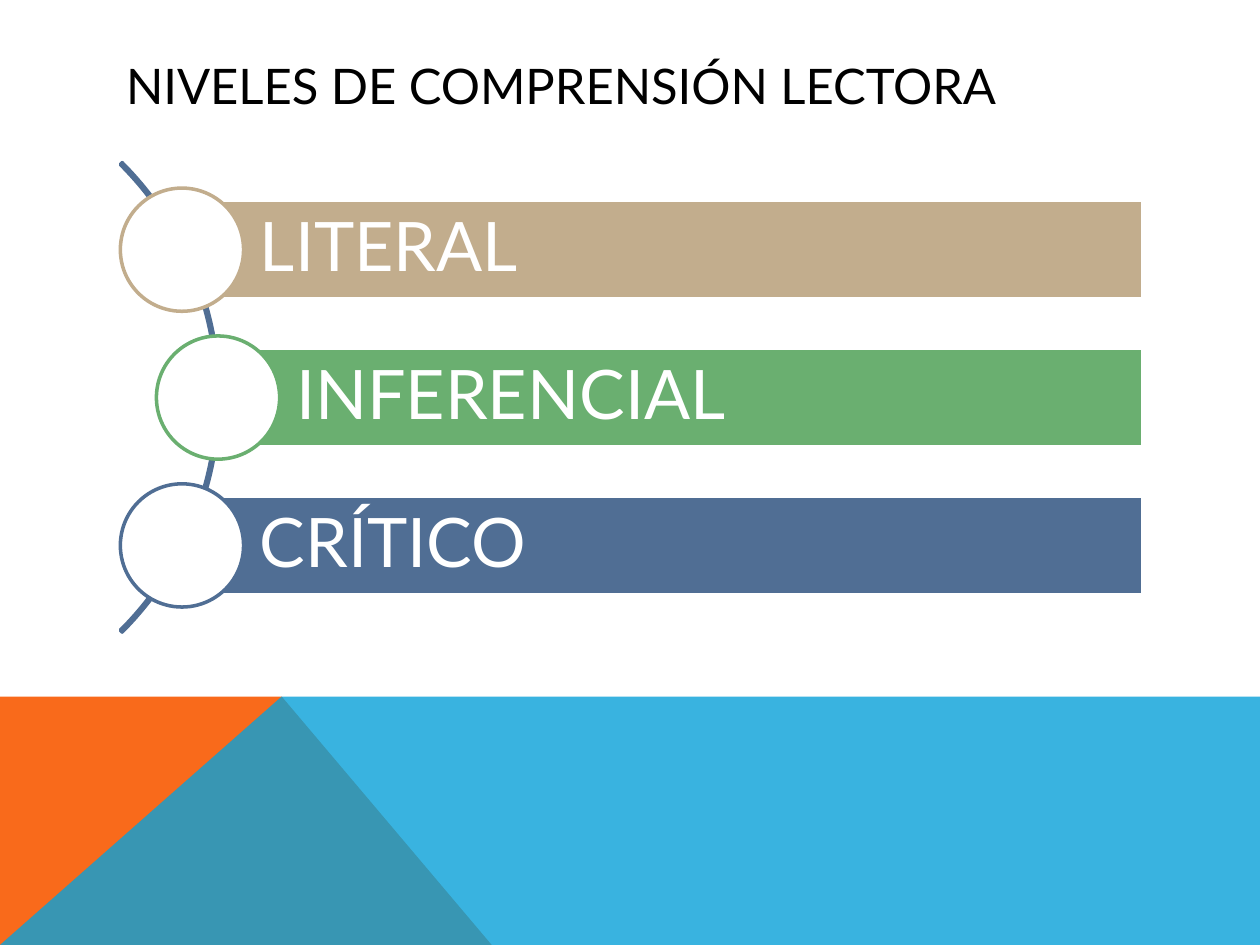
"""Builds the slide on the three levels of reading comprehension."""
from lxml import etree
from pptx import Presentation, util as u
from pptx.dml.color import RGBColor
from pptx.enum import shapes, text
from pptx.oxml.ns import qn

COLORS = {
    "white": "FFFFFF", "black": "000000", "orange": "F96A1B", "sky": "08A1D9",
    "sand": "C2AD8D", "green": "6AAF70", "blue": "506E94",
}
LEVELS = [("LITERAL", "sand", 104), ("INFERENCIAL", "green", 124.6), ("CRÍTICO", "blue", 104)]
BAR_RIGHT, BAR_HEIGHT, CIRCLE = 653, 56.3, 70.4
FIRST_CENTER, PITCH = 142.7, 84.5


def rgb(name):
    return RGBColor.from_string(COLORS[name])


def style(sp, fill=None, line=None):
    sp.shadow.inherit = False
    if fill:
        sp.fill.solid()
        sp.fill.fore_color.rgb = rgb(fill)
    else:
        sp.fill.background()
    if line:
        sp.line.color.rgb = rgb(line)
        sp.line.width = u.Pt(2)
    else:
        sp.line.fill.background()


def add_preset(s, kind, box, fill=None, line=None):
    sp = s.shapes.add_shape(kind, *map(u.Pt, box))
    style(sp, fill, line)
    return sp


def add_polygon(s, points, fill, alpha=100):
    builder = s.shapes.build_freeform(*points[0], scale=u.Pt(1))
    builder.add_line_segments(points[1:], close=True)
    sp = builder.convert_to_shape()
    style(sp, fill)
    if alpha < 100:
        color = sp.fill._xPr.find(".//" + qn("a:srgbClr"))
        etree.SubElement(color, qn("a:alpha")).set("val", str(alpha * 1000))


def write(sp, words, size, color, insets):
    tf = sp.text_frame
    tf.text = words
    tf.word_wrap = True
    tf.auto_size = text.MSO_AUTO_SIZE.NONE
    tf.vertical_anchor = text.MSO_ANCHOR.MIDDLE
    tf.margin_left, tf.margin_top, tf.margin_right, tf.margin_bottom = map(u.Pt, insets)
    p = tf.paragraphs[0]
    p.alignment = text.PP_ALIGN.LEFT
    p.line_spacing = 0.9
    font = p.runs[0].font
    font.name, font.size = "Lato", u.Pt(size)
    font.color.rgb = rgb(color)


def add_title(s, words):
    sp = s.shapes.title
    sp.left, sp.top, sp.width, sp.height = map(u.Pt, (64.8, 28.8, 592, 43.2))
    write(sp, words, 28, "black", (7.2, 3.6, 7.2, 3.6))


def add_arc(s):
    sp = add_preset(s, shapes.MSO_SHAPE.BLOCK_ARC, (-254, 37.4, 379.4, 379.4), line="blue")
    for i, value in enumerate((189, 27, 0.004)):
        sp.adjustments[i] = value


def add_level(s, words, color, left, center):
    bar = (left, center - BAR_HEIGHT / 2, BAR_RIGHT - left, BAR_HEIGHT)
    sp = add_preset(s, shapes.MSO_SHAPE.RECTANGLE, bar, color, "white")
    write(sp, words, 39, "white", (44.6, 7.9, 7.9, 7.9))
    circle = (left - CIRCLE / 2, center - CIRCLE / 2, CIRCLE, CIRCLE)
    add_preset(s, shapes.MSO_SHAPE.OVAL, circle, "white", color)


def main():
    prs = Presentation()
    prs.slide_width, prs.slide_height = u.Pt(720), u.Pt(540)
    s = prs.slides.add_slide(prs.slide_layouts[5])
    add_polygon(s, [(0, 540), (0, 397.6), (160.6, 397.6), (281.3, 540)], "orange")
    add_polygon(s, [(0, 540), (160.6, 397.6), (720, 397.6), (720, 540)], "sky", 80)
    add_title(s, "NIVELES DE COMPRENSIÓN LECTORA")
    add_arc(s)
    for i, (words, color, left) in enumerate(LEVELS):
        add_level(s, words, color, left, FIRST_CENTER + i * PITCH)
    prs.save("out.pptx")


if __name__ == "__main__":
    main()
